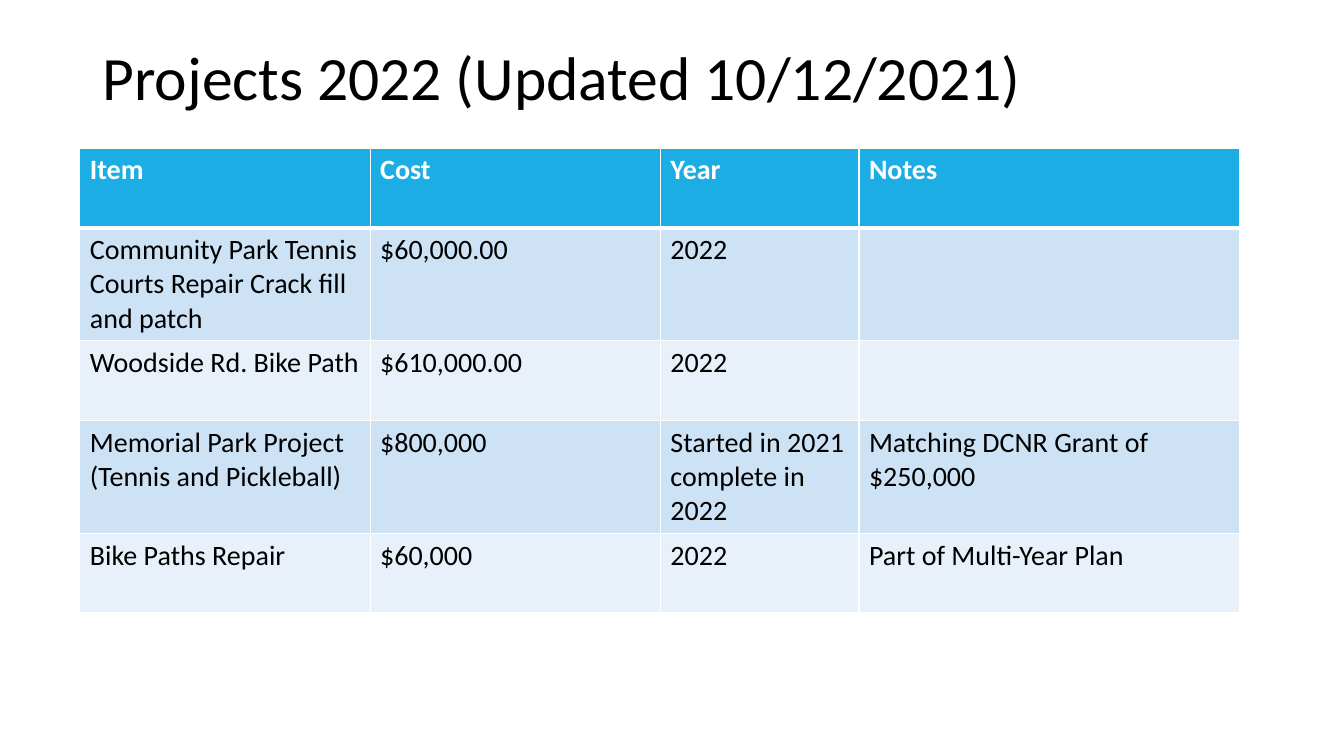
from dataclasses import dataclass

from lxml.etree import SubElement
from pptx import Presentation
from pptx.dml.color import RGBColor as Rgb
from pptx.enum.text import MSO_ANCHOR as Anchor
from pptx.oxml.ns import qn
from pptx.slide import Slide
from pptx.table import Table, _Cell as Cell
from pptx.text.text import TextFrame as Frame
from pptx.util import Pt


@dataclass(frozen=True)
class Theme:
    font: str = "Calibri"
    title: int = 44
    body: int = 20
    ink: str = "000000"
    white: str = "FFFFFF"
    head: str = "1CADE4"
    bands: tuple[str, str] = ("CDE3F5", "E8F1FA")
    thin: int = 1
    thick: int = 3


@dataclass(frozen=True)
class Project:
    item: str
    cost: str
    year: str
    notes: str = ""

    def texts(self) -> tuple[str, ...]:
        return self.item, self.cost, self.year, self.notes


THEME = Theme()
WIDTHS = (207.36, 207.36, 141.84, 272.16)
HEIGHT = 56.88
HEAD = Project("Item", "Cost", "Year", "Notes")
PROJECTS = (
    Project("Community Park Tennis Courts Repair Crack fill and patch", "$60,000.00", "2022"),
    Project("Woodside Rd. Bike Path", "$610,000.00", "2022"),
    Project(
        "Memorial Park Project\n(Tennis and Pickleball)",
        "$800,000",
        "Started in 2021\ncomplete in 2022",
        "Matching DCNR Grant of $250,000",
    ),
    Project("Bike Paths Repair", "$60,000", "2022", "Part of Multi-Year Plan"),
)


def write(frame: Frame, text: str, size: int, color: str, bold: bool = False) -> None:
    frame.text = text
    for para in frame.paragraphs:
        para.font.size = Pt(size)
        for run in para.runs:
            run.font.name = THEME.font
            run.font.size = Pt(size)
            run.font.bold = bold
            run.font.color.rgb = Rgb.from_string(color)


def edge(cell: Cell, top: int, base: int) -> None:
    props = cell._tc.get_or_add_tcPr()
    sides = {"L": THEME.thin, "R": THEME.thin, "T": top, "B": base}
    for place, (side, width) in enumerate(sides.items()):
        line = SubElement(props, qn(f"a:ln{side}"), w=str(Pt(width)))
        fill = SubElement(line, qn("a:solidFill"))
        SubElement(fill, qn("a:srgbClr"), val=THEME.white)
        props.insert(place, line)


def draw_row(table: Table, index: int, project: Project) -> None:
    head = index == 0
    fill = THEME.head if head else THEME.bands[(index - 1) % 2]
    color = THEME.white if head else THEME.ink
    top = THEME.thick if index == 1 else THEME.thin
    base = THEME.thick if head else THEME.thin
    table.rows[index].height = Pt(HEIGHT)
    for col, text in enumerate(project.texts()):
        cell = table.cell(index, col)
        write(cell.text_frame, text, THEME.body, color, head)
        cell.fill.solid()
        cell.fill.fore_color.rgb = Rgb.from_string(fill)
        edge(cell, top, base)


def draw_table(slide: Slide) -> None:
    rows = (HEAD, *PROJECTS)
    frame = slide.shapes.add_table(
        len(rows), len(WIDTHS), Pt(57), Pt(105.84), Pt(sum(WIDTHS)), Pt(HEIGHT * len(rows))
    )
    for col, width in zip(frame.table.columns, WIDTHS):
        col.width = Pt(width)
    for index, project in enumerate(rows):
        draw_row(frame.table, index, project)


def draw_title(slide: Slide) -> None:
    box = slide.shapes.add_textbox(Pt(66.24), Pt(28.8), Pt(828), Pt(HEIGHT))
    frame = box.text_frame
    frame.word_wrap = True
    frame.vertical_anchor = Anchor.MIDDLE
    write(frame, "Projects 2022 (Updated 10/12/2021)", THEME.title, THEME.ink)
    frame.paragraphs[0].line_spacing = 0.9


def main() -> None:
    deck = Presentation()
    deck.slide_width, deck.slide_height = Pt(960), Pt(540)
    slide = deck.slides.add_slide(deck.slide_layouts[6])
    draw_table(slide)
    draw_title(slide)
    deck.save("out.pptx")


if __name__ == "__main__":
    main()
